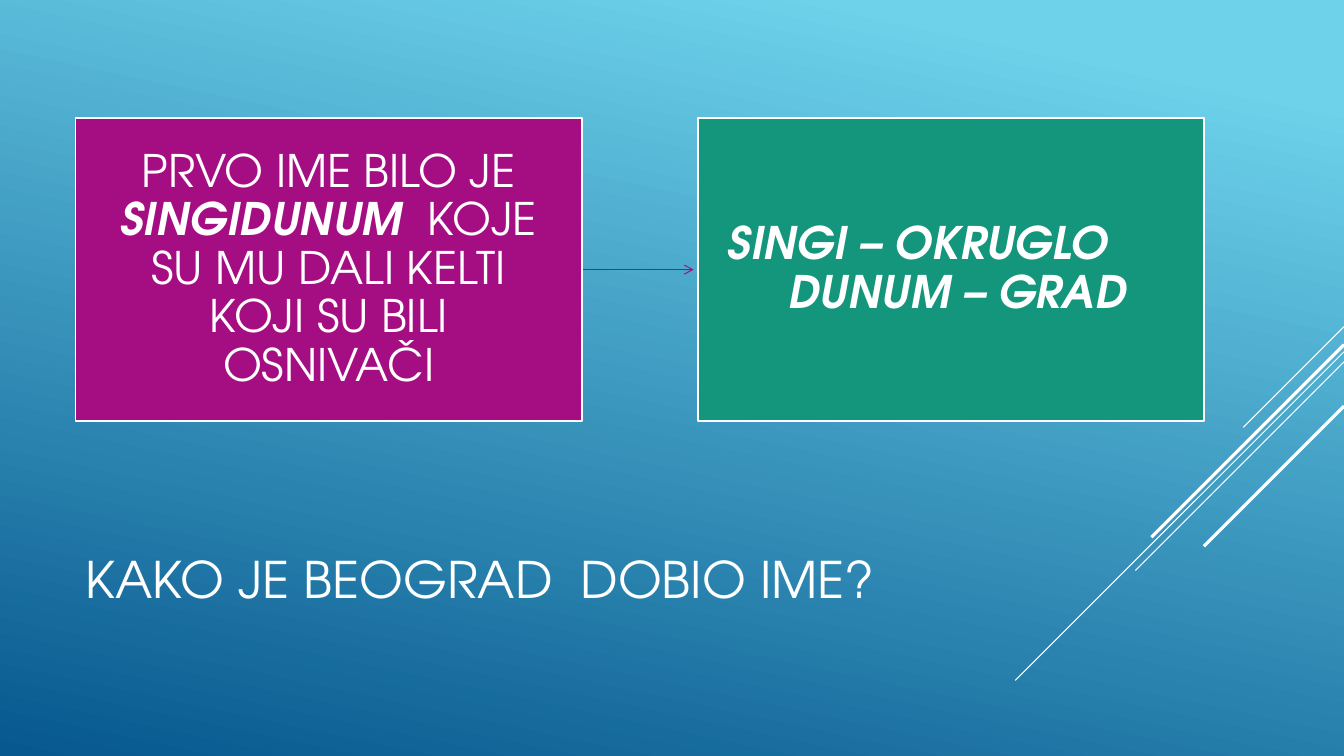
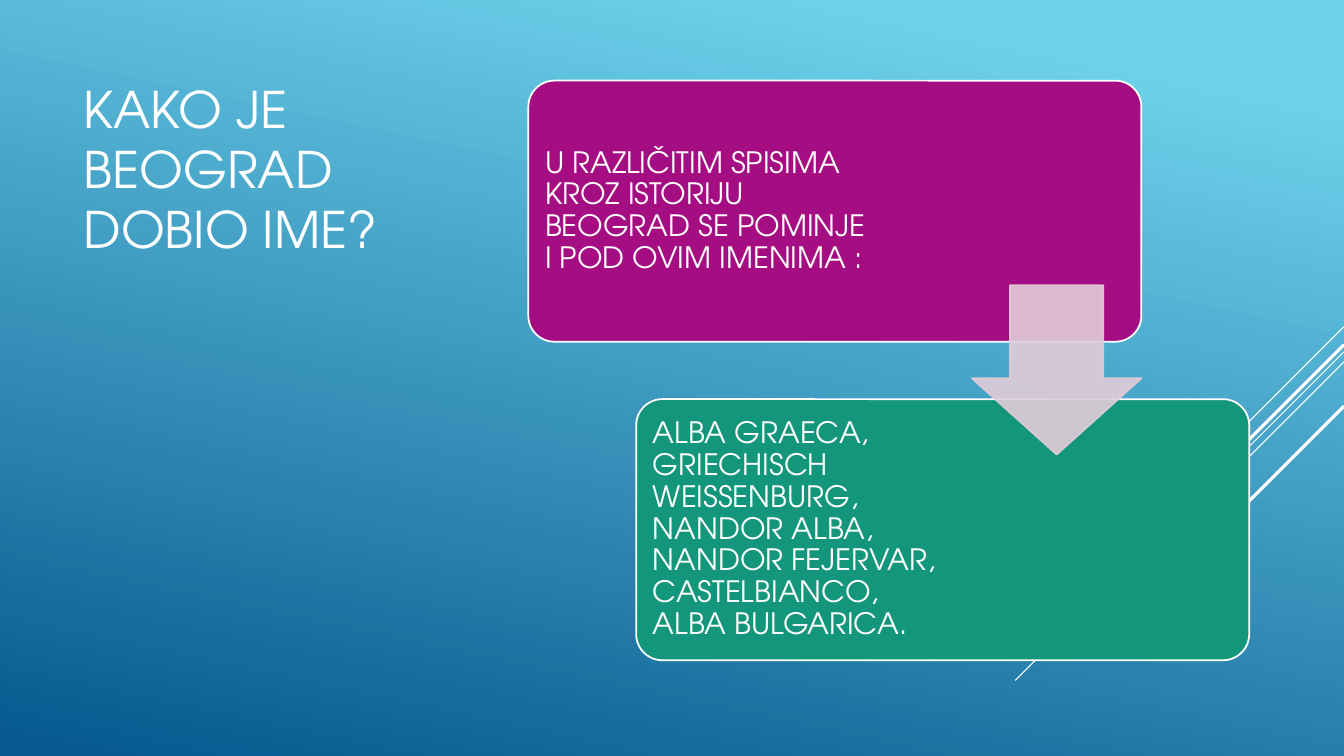
import pptx
import pptx.dml.color
import pptx.enum.shapes
import pptx.enum.text
import pptx.oxml.ns
import pptx.util
import lxml.etree

Inches = pptx.util.Inches
Pt = pptx.util.Pt
SHAPE = pptx.enum.shapes.MSO_SHAPE
ANCHOR = pptx.enum.text.MSO_ANCHOR
ALIGN = pptx.enum.text.PP_ALIGN
qn = pptx.oxml.ns.qn

FONT = "TeX Gyre Adventor"
WHITE, PURPLE, GREEN, PINK = "FFFFFF", "A50E82", "14967C", "E1CCD8"
SKY, NAVY = "6ED2EB", "06588E"
WIDTH, HEIGHT = 13.33, 7.5
QUESTION = "KAKO JE BEOGRAD  DOBIO IME?"
RAYS = [(3.24, 1, 0.75), (3.49, 3.26, 0.75), (3.59, 2.07, 0.75),
        (3.42, 1.91, 2.25), (4.03, 1.39, 2.25)]


def rgb(value):
    return pptx.dml.color.RGBColor.from_string(value)


def write(frame, paragraphs, size=36, align=ALIGN.LEFT, anchor=ANCHOR.MIDDLE,
          insets=(0.1, 0.05, 0.1, 0.05), spacing=1.0, indents=()):
    frame.word_wrap = True
    frame.auto_size = pptx.enum.text.MSO_AUTO_SIZE.NONE
    frame.vertical_anchor = anchor
    (frame.margin_left, frame.margin_top,
     frame.margin_right, frame.margin_bottom) = map(Inches, insets)
    for index, runs in enumerate(paragraphs):
        paragraph = frame.add_paragraph() if index else frame.paragraphs[0]
        paragraph.alignment = align
        paragraph.line_spacing = spacing
        paragraph.space_before = paragraph.space_after = Pt(0)
        if indents:
            properties = paragraph._p.get_or_add_pPr()
            properties.set("marL", str(Inches(indents[index])))
        for text, emphasis in runs:
            run = paragraph.add_run()
            run.text = text
            font = run.font
            font.name, font.size = FONT, Pt(size)
            font.bold = font.italic = emphasis
            font.color.rgb = rgb(WHITE)


def add_line(slide, start, end, color, width):
    ends = [Inches(value) for value in (*start, *end)]
    line = slide.shapes.add_connector(
        pptx.enum.shapes.MSO_CONNECTOR.STRAIGHT, *ends)
    line.line.color.rgb = rgb(color)
    line.line.width = Pt(width)
    lxml.etree.SubElement(line._element.spPr, qn("a:effectLst"))
    return line


def add_panel(slide, kind, box, color, outline=WHITE, adjustments=()):
    panel = slide.shapes.add_shape(kind, *map(Inches, box))
    panel.shadow.inherit = False
    panel.fill.solid()
    panel.fill.fore_color.rgb = rgb(color)
    panel.line.color.rgb = rgb(outline)
    panel.line.width = Pt(1.25)
    for index, value in enumerate(adjustments):
        panel.adjustments[index] = value
    return panel


def add_slide(deck, title_box, title_anchor):
    slide = deck.slides.add_slide(deck.slide_layouts[5])
    backdrop = slide.background.fill
    backdrop.gradient()
    backdrop.gradient_angle = 360 - 102
    for stop, position, color in zip(backdrop.gradient_stops, (0.1, 1), (SKY, NAVY)):
        stop.position = position
        stop.color.rgb = rgb(color)
    title = slide.shapes.title
    title.left, title.top, title.width, title.height = map(Inches, title_box)
    write(title.text_frame, [[(QUESTION, False)]], anchor=title_anchor)
    for top, reach, width in RAYS:
        add_line(slide, (WIDTH, top), (WIDTH - reach, top + reach), WHITE, width)
    return slide


def add_origin(slide, left, top, width, height, gap):
    middle = top + height / 2
    arrow = add_line(slide, (left + width, middle),
                     (left + width + gap - 0.04, middle), PURPLE, 0.75)
    lxml.etree.SubElement(arrow.line._get_or_add_ln(), qn("a:tailEnd"), type="arrow")
    first_name = [[("PRVO IME BILO JE ", False), ("SINGIDUNUM  ", True),
                   ("KOJE SU MU DALI KELTI KOJI SU BILI OSNIVAČI", False)]]
    meaning = [[("SINGI – OKRUGLO", True)], [("DUNUM – GRAD", True)]]
    cards = [(first_name, PURPLE, ALIGN.CENTER, ()),
             (meaning, GREEN, ALIGN.LEFT, (0.05, 0.65))]
    for index, (paragraphs, color, align, indents) in enumerate(cards):
        box = (left + index * (width + gap), top, width, height)
        card = add_panel(slide, SHAPE.RECTANGLE, box, color)
        write(card.text_frame, paragraphs, size=32, align=align, spacing=0.9,
              insets=(0.25, 0.26, 0.25, 0.26), indents=indents)


def add_names(slide, left, top, width, height):
    step_x, step_y = 1.07, 3.16
    steps = [
        ("U RAZLIČITIM SPISIMA KROZ ISTORIJU BEOGRAD SE POMINJE "
         "I POD OVIM IMENIMA :", PURPLE, 2.62),
        ("ALBA GRAECA, GRIECHISCH WEISSENBURG, NANDOR ALBA, "
         "NANDOR FEJERVAR, CASTELBIANCO, ALBA BULGARICA.", GREEN, 2.84),
    ]
    for index, (text, color, right_inset) in enumerate(steps):
        box = (left + index * step_x, top + index * step_y, width, height)
        card = add_panel(slide, SHAPE.ROUNDED_RECTANGLE, box, color,
                         adjustments=(0.1,))
        write(card.text_frame, [[(text, False)]], size=21, spacing=0.9,
              insets=(0.09, 0.09, right_inset, 0.09))
    side = 1.68
    arrow = add_panel(slide, SHAPE.DOWN_ARROW,
                      (left + width - side, top + 2.03, side, side),
                      PINK, PINK, (0.55, 0.45))
    for color in arrow._element.spPr.iter(qn("a:srgbClr")):
        lxml.etree.SubElement(color, qn("a:alpha"), val="90000")


def main():
    deck = pptx.Presentation()
    deck.slide_width, deck.slide_height = Inches(WIDTH), Inches(HEIGHT)
    origin = add_slide(deck, (0.75, 4.91, 9.33, 1.65), ANCHOR.MIDDLE)
    add_origin(origin, 0.75, 1.17, 5.02, 3.01, 1.15)
    names = add_slide(deck, (0.73, 0.72, 3.24, 3.19), ANCHOR.TOP)
    add_names(names, 5.24, 0.8, 6.08, 2.59)
    deck.save("out.pptx")


if __name__ == "__main__":
    main()
